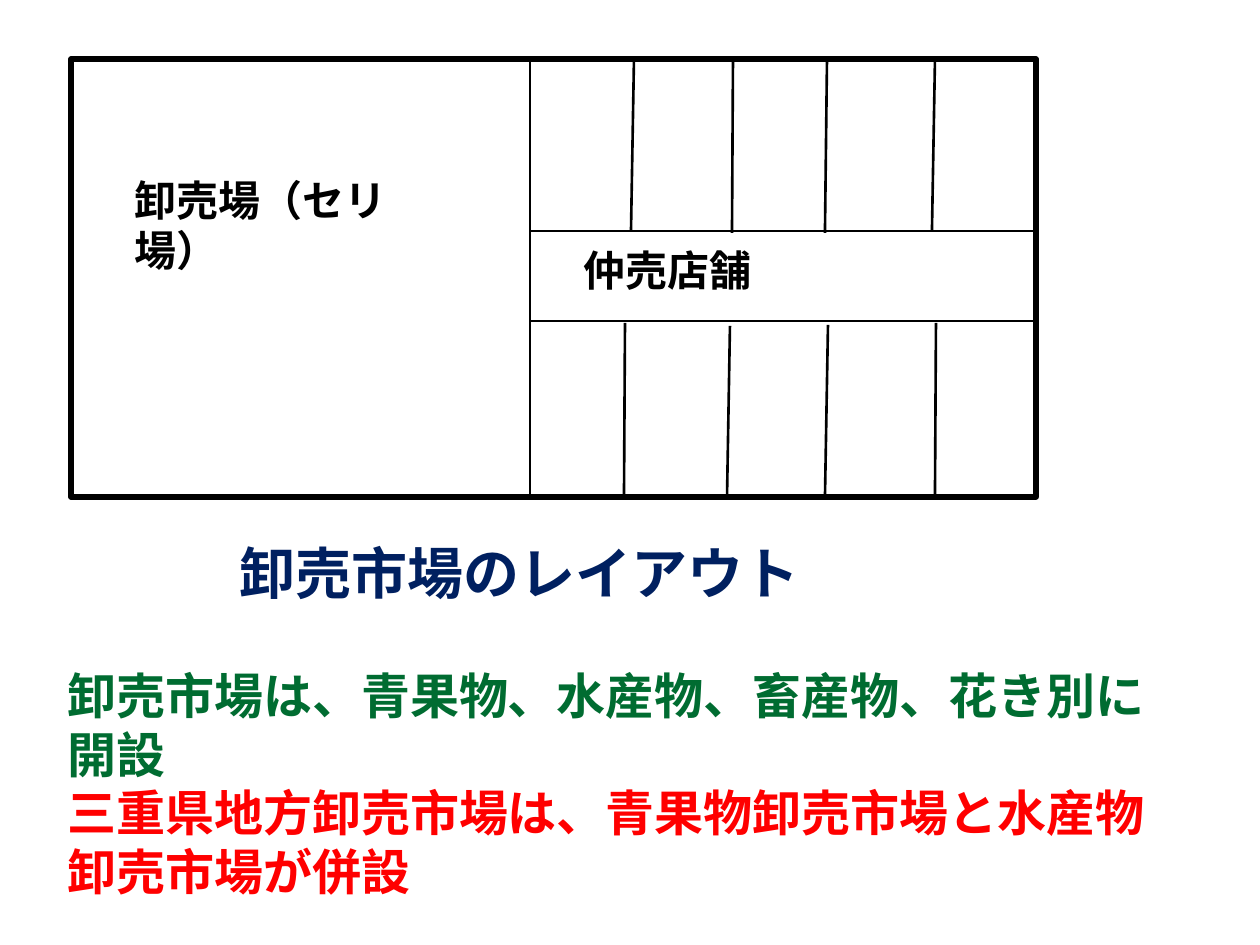
from dataclasses import dataclass

from lxml.etree import SubElement
from pptx import Presentation
from pptx.dml.color import RGBColor
from pptx.enum.shapes import MSO_CONNECTOR, MSO_SHAPE
from pptx.enum.text import MSO_ANCHOR, MSO_AUTO_SIZE, PP_ALIGN
from pptx.oxml.ns import qn
from pptx.util import Emu, Pt

EMU_PER_PX = 914400 / 126


@dataclass(frozen=True)
class Theme:
    """Colours, type sizes and line widths of the slide."""

    font: str = "Calibri"
    ink: str = "000000"
    navy: str = "002060"
    green: str = "006C31"
    red: str = "FF0000"
    label_size: int = 24
    body_size: int = 28
    title_size: int = 32
    wall_width: float = 3
    partition_width: float = 1.5


THEME = Theme()

MARKET = (71, 59, 965, 438)
DIVIDER_X = 530
AISLE_EDGES = (231, 321)
UPPER_PARTITIONS = [
    (631, 231, 634, 59),
    (732, 233, 733, 60),
    (825, 233, 827, 60),
    (932, 231, 935, 59),
]
LOWER_PARTITIONS = [
    (624, 495, 625, 323),
    (727, 499, 730, 326),
    (825, 498, 828, 325),
    (935, 495, 936, 323),
]


def px(*lengths):
    """Turn pixel lengths into EMU."""
    return [Emu(round(length * EMU_PER_PX)) for length in lengths]


def place(shape, box):
    """Move and size a shape to a pixel box."""
    shape.left, shape.top, shape.width, shape.height = px(*box)


def write(paragraph, text, *, size, color=THEME.ink, align=PP_ALIGN.LEFT):
    """Write bold, unbulleted text into a paragraph."""
    paragraph.text = text
    paragraph.alignment = align
    paragraph.space_before = Pt(0)
    properties = paragraph._p.get_or_add_pPr()
    properties.set("marL", "0")
    properties.set("indent", "0")
    SubElement(properties, qn("a:buNone"))
    paragraph.font.name = THEME.font
    paragraph.font.size = Pt(size)
    paragraph.font.bold = True
    paragraph.font.color.rgb = RGBColor.from_string(color)


def prepare_frame(shape, anchor=MSO_ANCHOR.TOP):
    """Set wrapping and anchoring of a text shape and return its frame."""
    frame = shape.text_frame
    frame.word_wrap = True
    frame.auto_size = MSO_AUTO_SIZE.NONE
    frame.vertical_anchor = anchor
    return frame


def style_line(line, width):
    """Give a line the ink colour and a width in points."""
    line.color.rgb = RGBColor.from_string(THEME.ink)
    line.width = Pt(width)


def add_wall(slide, box):
    """Add the unfilled outline of the market."""
    wall = slide.shapes.add_shape(MSO_SHAPE.RECTANGLE, *px(*box))
    wall.shadow.inherit = False
    wall.fill.background()
    style_line(wall.line, THEME.wall_width)


def add_partition(slide, ends):
    """Add a straight inner partition."""
    partition = slide.shapes.add_connector(MSO_CONNECTOR.STRAIGHT, *px(*ends))
    style_line(partition.line, THEME.partition_width)
    SubElement(partition._element.spPr, qn("a:effectLst"))


def add_label(slide, text, box):
    """Add the name of an area."""
    label = slide.shapes.add_textbox(*px(*box))
    write(prepare_frame(label).paragraphs[0], text, size=THEME.label_size)


def fill_title(slide, text, box):
    """Place and write the slide title."""
    title = slide.shapes.title
    place(title, box)
    paragraph = prepare_frame(title, MSO_ANCHOR.MIDDLE).paragraphs[0]
    write(paragraph, text, size=THEME.title_size, color=THEME.navy, align=PP_ALIGN.CENTER)


def fill_body(slide, items, box):
    """Place the body and write one coloured paragraph per item."""
    body = slide.placeholders[1]
    place(body, box)
    frame = prepare_frame(body)
    for index, (text, color) in enumerate(items):
        paragraph = frame.add_paragraph() if index else frame.paragraphs[0]
        write(paragraph, text, size=THEME.body_size, color=color)


def main():
    """Build the market layout slide."""
    presentation = Presentation()
    presentation.slide_width, presentation.slide_height = px(1260, 945)
    slide = presentation.slides.add_slide(presentation.slide_layouts[1])

    left, top, width, height = MARKET
    right, bottom = left + width, top + height
    add_wall(slide, MARKET)
    divider = (DIVIDER_X, top, DIVIDER_X, bottom)
    aisle = [(DIVIDER_X, y, right, y) for y in AISLE_EDGES]
    for ends in [divider, *aisle, *UPPER_PARTITIONS, *LOWER_PARTITIONS]:
        add_partition(slide, ends)

    add_label(slide, "卸売場（セリ場）", (122, 168, 316, 63))
    add_label(slide, "仲売店舗", (571, 238, 316, 63))
    fill_title(slide, "卸売市場のレイアウト", (122, 532, 796, 81))
    notes = [
        ("卸売市場は、青果物、水産物、畜産物、花き別に開設", THEME.green),
        ("三重県地方卸売市場は、青果物卸売市場と水産物卸売市場が併設", THEME.red),
    ]
    fill_body(slide, notes, (55, 659, 1140, 190))
    presentation.save("out.pptx")


if __name__ == "__main__":
    main()
